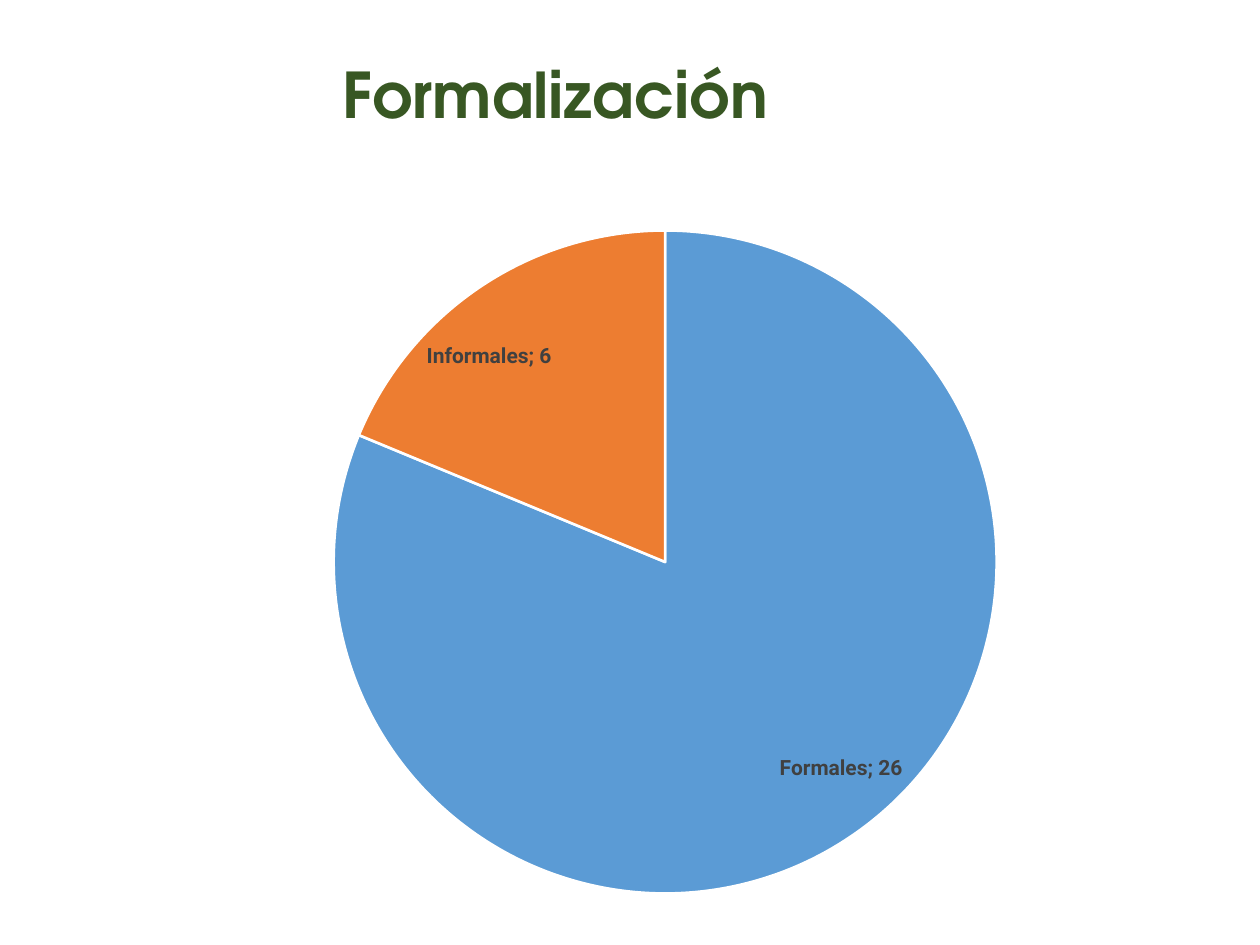
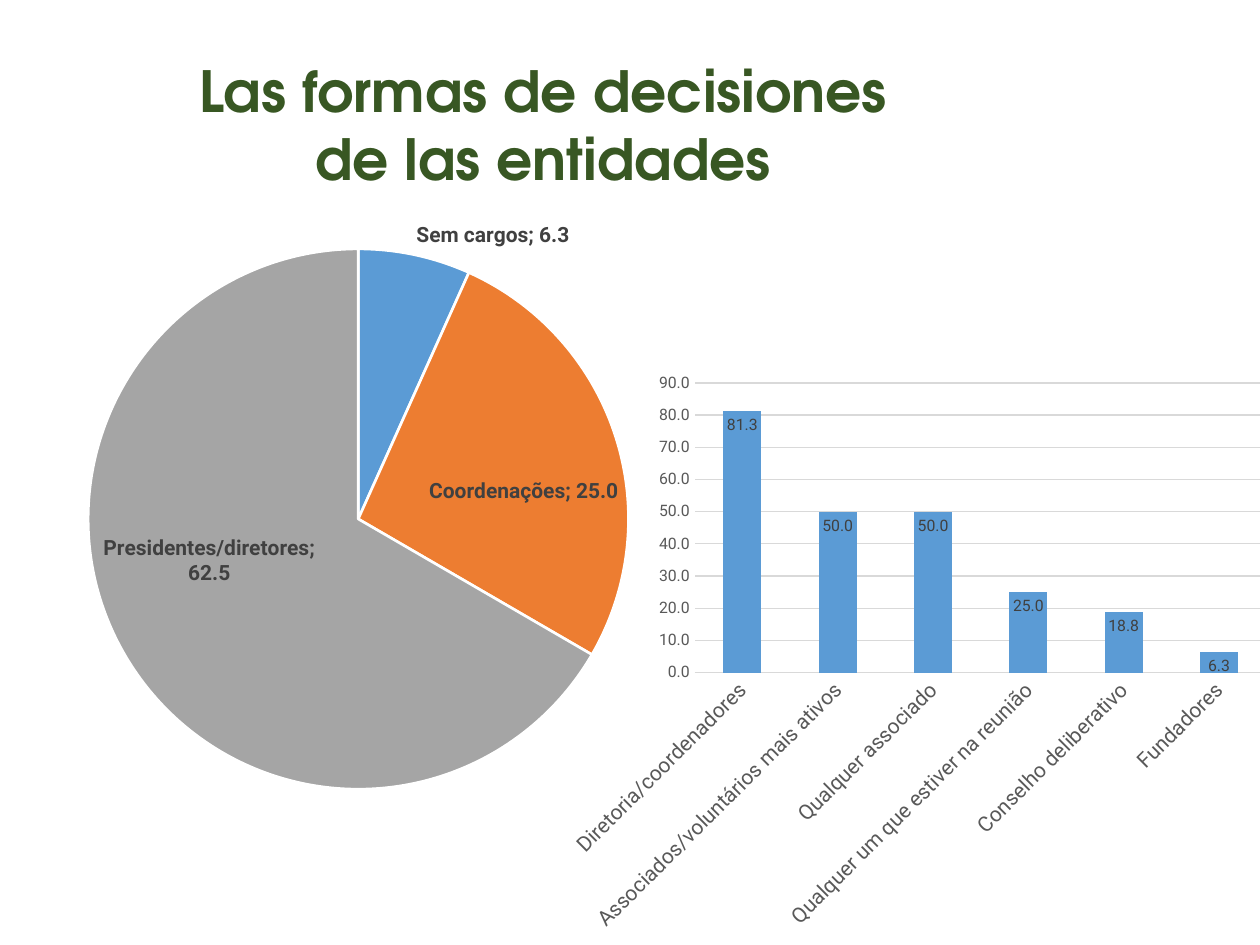
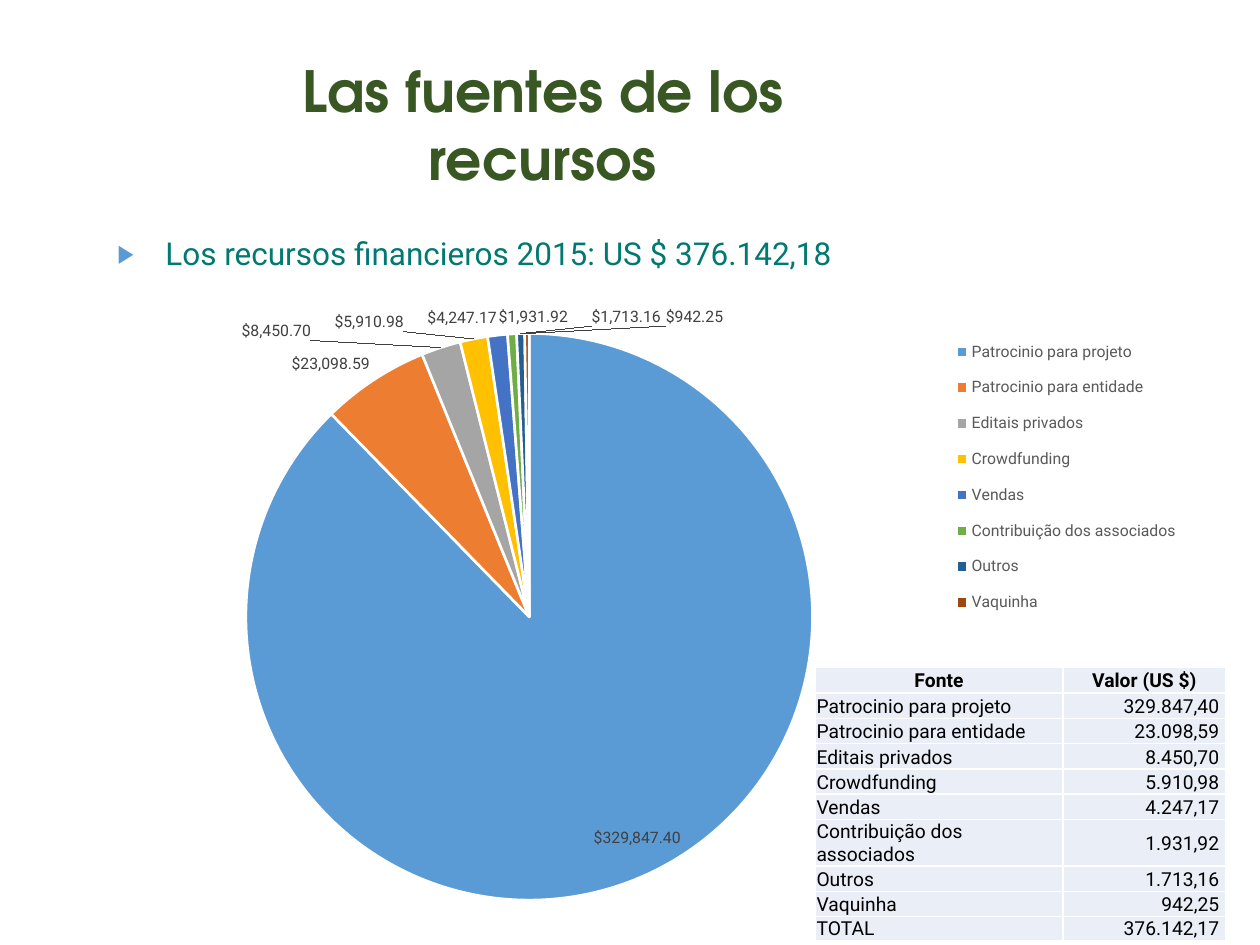
from pptx import Presentation
from pptx import util as u
from pptx.chart import data as chart_data
from pptx.dml import color
from pptx.enum import chart as ch, text
from pptx.oxml import parse_xml
from pptx.oxml import ns

BODY_FONT = "Roboto"
TITLE_FONT = "TeX Gyre Adventor"
GREEN, TEAL, BLACK, WHITE = "385723", "007970", "000000", "FFFFFF"
AXIS_GREY, LABEL_GREY, GRID_GREY = "595959", "404040", "D9D9D9"
CELL_FILL = "EAEFF7"
PALETTE = ["5B9BD5", "ED7D31", "A5A5A5", "FFC000", "4472C4", "70AD47", "255E91", "9E480E"]

SOURCES = [
    ("Patrocinio para projeto", 329847.40),
    ("Patrocinio para entidade", 23098.59),
    ("Editais privados", 8450.70),
    ("Crowdfunding", 5910.98),
    ("Vendas", 4247.17),
    ("Contribuição dos associados", 1931.92),
    ("Outros", 1713.16),
    ("Vaquinha", 942.25),
]
DECISION_MAKERS = [
    ("Diretoria/coordenadores", 81.3),
    ("Associados/voluntários mais ativos", 50),
    ("Qualquer associado", 50),
    ("Qualquer um que estiver na reunião", 25),
    ("Conselho deliberativo", 18.8),
    ("Fundadores", 6.3),
]


def rgb(hex_code):
    """Turn a hex string into a colour."""
    return color.RGBColor.from_string(hex_code)


def style_font(font, size, hex_code, bold=False, name=BODY_FONT):
    """Set face, size, colour and weight of a font."""
    font.name, font.size, font.bold = name, u.Pt(size), bold
    font.color.rgb = rgb(hex_code)


def element(xml):
    """Parse XML whose root tag ends in a namespace marker."""
    return parse_xml(xml.replace("NS", ns.nsdecls("a", "c"), 1))


def move(shape, left, top, width, height):
    """Place a shape, in centimetres."""
    shape.left, shape.top = u.Cm(left), u.Cm(top)
    shape.width, shape.height = u.Cm(width), u.Cm(height)


def add_slide(prs, layout, title, size, width):
    """Add a slide with a formatted title."""
    slide = prs.slides.add_slide(prs.slide_layouts[layout])
    heading = slide.shapes.title
    move(heading, 3.68, 0.99, width, 2.44)
    frame = heading.text_frame
    frame.text = title
    frame.auto_size = text.MSO_AUTO_SIZE.NONE
    frame.vertical_anchor = text.MSO_ANCHOR.TOP
    frame.paragraphs[0].alignment = text.PP_ALIGN.CENTER
    style_font(frame.paragraphs[0].runs[0].font, size, GREEN, True, TITLE_FONT)
    return slide


def fill_body(slide, wording):
    """Write the bulleted statement into the body placeholder."""
    body = slide.placeholders[1]
    move(body, 2.11, 4.6, 21.84, 13.18)
    frame = body.text_frame
    frame.text = wording
    frame.auto_size = text.MSO_AUTO_SIZE.NONE
    statement = frame.paragraphs[0]
    props = statement._p.get_or_add_pPr()
    props.set("marL", str(u.Cm(0.97)))
    props.set("indent", str(-u.Cm(0.97)))
    props.append(element(f'<a:buClr NS><a:srgbClr val="{PALETTE[0]}"/></a:buClr>'))
    props.append(element('<a:buSzPct NS val="80000"/>'))
    props.append(element('<a:buChar NS char="▶"/>'))
    statement.space_before = u.Pt(0)
    style_font(statement.runs[0].font, 18, TEAL)


def set_layout(parent, index, area, target=""):
    """Fix the area of a chart part, as fractions of the chart."""
    old = parent.find(ns.qn("c:layout"))
    if old is not None:
        parent.remove(old)
    modes = '<c:xMode val="edge"/><c:yMode val="edge"/>'
    sizes = "".join(f'<c:{key} val="{value}"/>' for key, value in zip("xywh", area))
    parent.insert(index, element(
        f"<c:layout NS><c:manualLayout>{target}{modes}{sizes}</c:manualLayout></c:layout>"))


def add_chart(slide, kind, rows, box, plot_area):
    """Add a single-series chart without title or legend."""
    data = chart_data.CategoryChartData()
    data.categories = [name for name, _ in rows]
    data.add_series("Series 1", [value for _, value in rows])
    chart = slide.shapes.add_chart(kind, *map(u.Cm, box), data).chart
    chart.has_title = chart.has_legend = False
    style_font(chart.font, 10, BLACK)
    plot_xml = chart._chartSpace.chart.plotArea
    set_layout(plot_xml, 0, plot_area, '<c:layoutTarget val="inner"/>')
    return chart


def label_series(series, size, number_format=None, bold=False, position=None, names=False):
    """Show values, and category names if wanted, on a series."""
    labels = series.data_labels
    style_font(labels.font, size, LABEL_GREY, bold)
    labels.show_value = True
    labels.show_category_name = names
    if number_format:
        labels.number_format = number_format
        labels.number_format_is_linked = False
    if position is not None:
        labels.position = position
    if names:
        last_flag = labels._element.find(ns.qn("c:showBubbleSize"))
        last_flag.addnext(element("<c:separator NS>; </c:separator>"))


def add_pie(slide, rows, box, plot_area, **label_options):
    """Add a pie with white-edged slices in palette order."""
    chart = add_chart(slide, ch.XL_CHART_TYPE.PIE, rows, box, plot_area)
    pie = chart.plots[0]
    pie.vary_by_categories = True
    series = pie.series[0]
    for index, hex_code in enumerate(PALETTE[:len(rows)]):
        slice_format = series.points[index].format
        slice_format.fill.solid()
        slice_format.fill.fore_color.rgb = rgb(hex_code)
        slice_format.line.color.rgb = rgb(WHITE)
        slice_format.line.width = u.Pt(1.5)
    label_series(series, **label_options)
    return chart


def add_columns(slide, rows, box, plot_area):
    """Add the column chart with slanted category names."""
    chart = add_chart(slide, ch.XL_CHART_TYPE.COLUMN_STACKED, rows, box, plot_area)
    columns = chart.plots[0]
    columns.vary_by_categories = False
    columns.gap_width, columns.overlap = 150, 100
    series = columns.series[0]
    series.format.fill.solid()
    series.format.fill.fore_color.rgb = rgb(PALETTE[0])
    label_series(series, 9, "0.0", position=ch.XL_LABEL_POSITION.INSIDE_END)

    names, values = chart.category_axis, chart.value_axis
    for axis, size in ((names, 12), (values, 9)):
        axis.major_tick_mark = axis.minor_tick_mark = ch.XL_TICK_MARK.NONE
        style_font(axis.tick_labels.font, size, AXIS_GREY)
    names._element.txPr.find(ns.qn("a:bodyPr")).set("rot", "-2700000")
    values.minimum_scale, values.maximum_scale, values.major_unit = 0, 90, 10
    values.tick_labels.number_format = "0.0"
    values.tick_labels.number_format_is_linked = False
    values.format.line.fill.background()
    values.has_major_gridlines = True
    for line in (names.format.line, values.major_gridlines.format.line):
        line.color.rgb = rgb(GRID_GREY)
        line.width = u.Pt(0.75)


def add_legend(chart, area):
    """Add a legend at the right, in a fixed area."""
    chart.has_legend = True
    legend = chart.legend
    legend.position = ch.XL_LEGEND_POSITION.RIGHT
    legend.include_in_layout = False
    style_font(legend.font, 9, AXIS_GREY)
    set_layout(legend._element, 1, area)


def fill_cell(cell, wording, anchor, alignment, bold):
    """Write one table cell with white borders."""
    cell.text = wording
    cell.vertical_anchor = anchor
    cell.margin_left = cell.margin_top = u.Cm(0.03)
    cell.margin_right = u.Cm(0.13 if alignment == text.PP_ALIGN.RIGHT else 0.03)
    cell.margin_bottom = 0
    props = cell._tc.get_or_add_tcPr()
    for side in "LRTB":
        props.append(element(
            f'<a:ln{side} NS w="{u.Pt(1)}"><a:solidFill><a:srgbClr val="{WHITE}"/>'
            f"</a:solidFill></a:ln{side}>"))
    cell.fill.solid()
    cell.fill.fore_color.rgb = rgb(CELL_FILL)
    paragraph = cell.text_frame.paragraphs[0]
    paragraph.alignment = alignment
    style_font(paragraph.runs[0].font, 11, BLACK, bold)


def local_amount(value):
    """Format an amount with a decimal comma."""
    return f"{value:,.2f}".translate(str.maketrans(",.", ".,"))


def add_source_table(slide):
    """Add the table of sources with its total."""
    total = sum(value for _, value in SOURCES)
    rows = [("Fonte", "Valor (US $)")]
    rows += [(name, local_amount(value)) for name, value in SOURCES + [("TOTAL", total)]]
    table = slide.shapes.add_table(
        len(rows), 2, u.Cm(16.43), u.Cm(13.46), u.Cm(8.28), u.Cm(5.1)).table
    table.first_row = table.horz_banding = False
    table.columns[0].width, table.columns[1].width = u.Cm(5), u.Cm(3.28)
    for index, row in enumerate(rows):
        is_head = index == 0
        table.rows[index].height = u.Cm(0.43 if row[0] == "TOTAL" else 0.51)
        centred = is_head or row[0].startswith("Contribuição")
        anchor = text.MSO_ANCHOR.MIDDLE if centred else text.MSO_ANCHOR.BOTTOM
        for column, side in enumerate((text.PP_ALIGN.LEFT, text.PP_ALIGN.RIGHT)):
            alignment = text.PP_ALIGN.CENTER if is_head else side
            fill_cell(table.cell(index, column), row[column], anchor, alignment, is_head)


def main():
    """Build the three slides."""
    prs = Presentation()
    prs.slide_width, prs.slide_height = u.Cm(25.4), u.Cm(19.05)

    formal = add_slide(prs, 5, "Formalización", 36, 15.04)
    add_pie(formal, [("Formales", 26), ("Informales", 6)], (2.64, 4.22, 20.32, 14.22),
            (0.2, 0.03, 0.66, 0.94), size=12, bold=True, names=True)

    decisions = add_slide(prs, 5, "Las formas de decisiones de las entidades", 32.4, 14.53)
    add_columns(decisions, DECISION_MAKERS, (11.23, 7.37, 14.6, 11.68), (0.19, 0.03, 0.79, 0.5))
    roles = [("Sem cargos", 6.3), ("Coordenações", 25), ("Presidentes/diretores", 62.5)]
    add_pie(decisions, roles, (-1.98, 4.04, 17.7, 12.24), (0.21, 0.08, 0.62, 0.89),
            size=12, number_format="0.0", bold=True, names=True)

    funding = add_slide(prs, 1, "Las fuentes de los recursos", 32.4, 14.53)
    fill_body(funding, "Los recursos financieros 2015: US $ 376.142,18")
    add_source_table(funding)
    sources = add_pie(funding, SOURCES, (0.91, 5.79, 23.8, 12.78), (0.17, 0.07, 0.48, 0.9),
                      size=9, number_format="[$$-409]#,##0.00",
                      position=ch.XL_LABEL_POSITION.BEST_FIT)
    add_legend(sources, (0.74, 0.06, 0.25, 0.48))

    prs.save("out.pptx")


if __name__ == "__main__":
    main()
